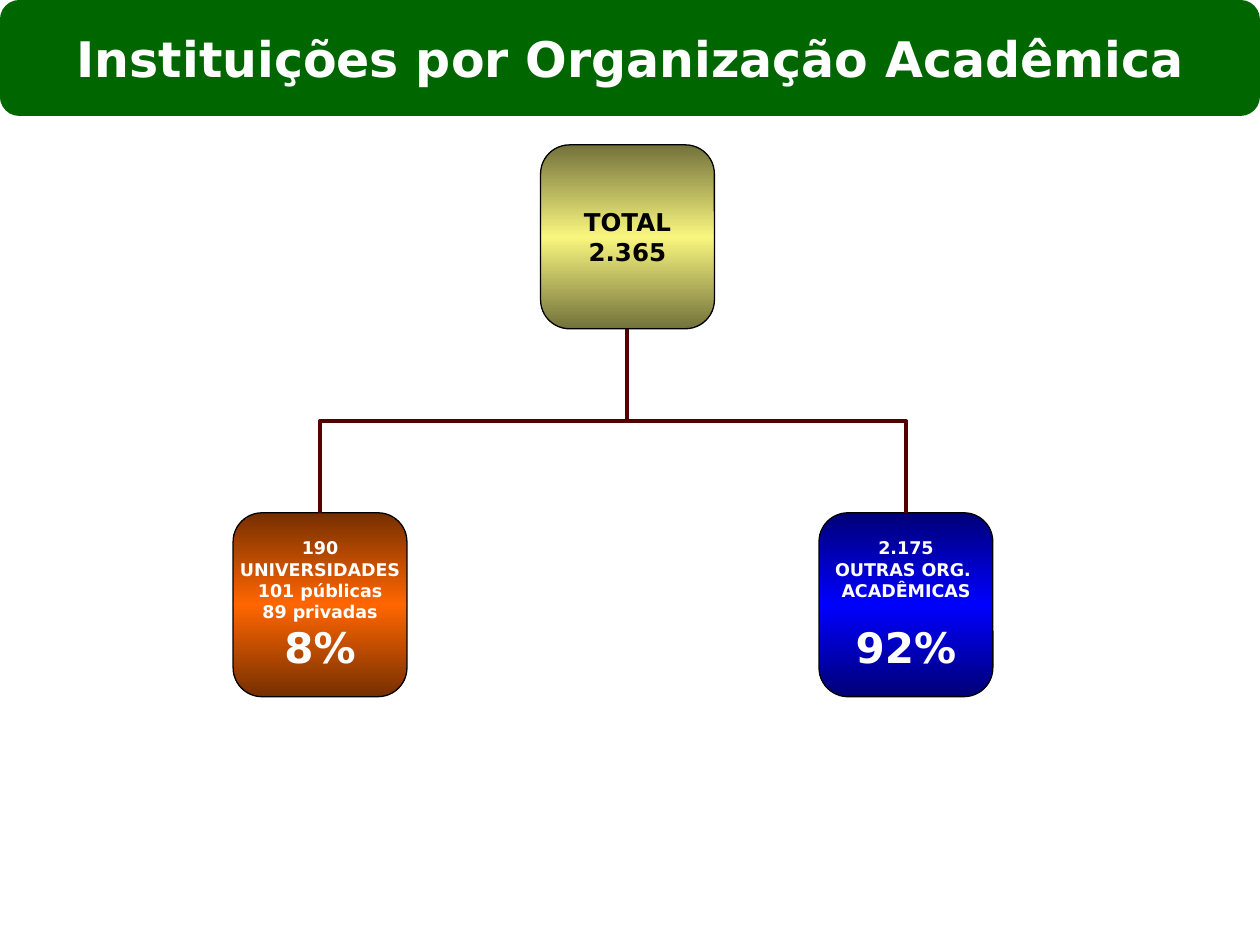
from lxml import etree
from pptx import Presentation
from pptx.dml.color import RGBColor
from pptx.enum.shapes import MSO_CONNECTOR, MSO_SHAPE
from pptx.enum.text import MSO_ANCHOR, MSO_AUTO_SIZE, PP_ALIGN
from pptx.oxml.ns import qn
from pptx.util import Inches, Pt

ROUNDED = MSO_SHAPE.ROUNDED_RECTANGLE
BANNER = MSO_SHAPE.FLOWCHART_ALTERNATE_PROCESS
ELBOW = MSO_CONNECTOR.ELBOW
MIDDLE = MSO_ANCHOR.MIDDLE
CENTER = PP_ALIGN.CENTER
NO_AUTOFIT = MSO_AUTO_SIZE.NONE

BLACK = RGBColor(0x00, 0x00, 0x00)
WHITE = RGBColor(0xFF, 0xFF, 0xFF)
GREEN = RGBColor(0x00, 0x66, 0x00)
MAROON = RGBColor(0x54, 0x00, 0x00)
OLIVE = RGBColor(0x73, 0x72, 0x3B)
YELLOW = RGBColor(0xF9, 0xF6, 0x7F)
BROWN = RGBColor(0x76, 0x2F, 0x00)
ORANGE = RGBColor(0xFF, 0x66, 0x00)
NAVY = RGBColor(0x00, 0x00, 0x76)
BLUE = RGBColor(0x00, 0x00, 0xFF)

FONT = "DejaVu Sans"
SLIDE_W, SLIDE_H = Inches(10), Inches(7.5)
BANNER_H = Inches(0.92)
BOX_W, BOX_H = Inches(1.38), Inches(1.46)
TOP_ROW = Inches(1.15)
BOTTOM_ROW = TOP_ROW + 2 * BOX_H
LEFT_COLUMN, MIDDLE_COLUMN, RIGHT_COLUMN = Inches(1.85), Inches(4.29), Inches(6.5)


def write_lines(frame, lines, color, size, last_size=None, last_gap=0, margin=0):
    frame.auto_size = NO_AUTOFIT
    frame.word_wrap = False
    frame.vertical_anchor = MIDDLE
    frame.margin_left = frame.margin_right = margin
    frame.margin_top = frame.margin_bottom = margin
    frame.text = "\n".join(lines)
    for line in frame.paragraphs:
        line.alignment = CENTER
        line.font.name = FONT
        line.font.size = Pt(size)
        line.font.bold = True
        line.font.color.rgb = color
    if last_size:
        line.font.size = Pt(last_size)
        line.space_before = Pt(last_gap)


def fill_banded(shape, edge, center):
    shape.fill.gradient()
    shape.fill.gradient_angle = 90
    stops = shape._element.spPr.find(qn("a:gradFill")).find(qn("a:gsLst"))
    for stop in list(stops):
        stops.remove(stop)
    for position, color in ((0, edge), (50000, center), (100000, edge)):
        stop = etree.SubElement(stops, qn("a:gs"), pos=str(position))
        etree.SubElement(stop, qn("a:srgbClr"), val=str(color))


def add_box(slide, left, top, edge, center, lines, **text_format):
    box = slide.shapes.add_shape(ROUNDED, left, top, BOX_W, BOX_H)
    box.shadow.inherit = False
    fill_banded(box, edge, center)
    box.line.color.rgb = BLACK
    box.line.width = Pt(0.75)
    write_lines(box.text_frame, lines, **text_format)
    return box


def add_branch(slide, child, parent):
    branch = slide.shapes.add_connector(ELBOW, 0, 0, 0, 0)
    branch.begin_connect(child, 0)
    branch.end_connect(parent, 2)
    child_x = child.left + BOX_W // 2
    parent_x = parent.left + BOX_W // 2
    parent_bottom = parent.top + BOX_H
    drop, reach = child.top - parent_bottom, abs(child_x - parent_x)
    branch.left = (child_x + parent_x - drop) // 2
    branch.top = (child.top + parent_bottom - reach) // 2
    branch.width, branch.height = drop, reach
    on_right = child_x > parent_x
    frame = branch._element.spPr.find(qn("a:xfrm"))
    frame.set("rot", str((90 if on_right else 270) * 60000))
    frame.set("flipH", "1" if on_right else "0")
    frame.set("flipV", "0")
    branch.line.color.rgb = MAROON
    branch.line.width = Pt(2.25)
    etree.SubElement(branch._element.spPr, qn("a:effectLst"))


def add_title(slide, text):
    banner = slide.shapes.add_shape(BANNER, 0, 0, SLIDE_W, BANNER_H)
    banner.shadow.inherit = False
    banner.fill.solid()
    banner.fill.fore_color.rgb = GREEN
    banner.line.fill.background()
    title = slide.shapes.title
    title.left, title.top, title.width, title.height = 0, 0, SLIDE_W, BANNER_H
    write_lines(title.text_frame, [text], color=WHITE, size=28, margin=Inches(0.05))
    slide.shapes._spTree.append(title._element)


def main():
    deck = Presentation()
    deck.slide_width, deck.slide_height = SLIDE_W, SLIDE_H
    slide = deck.slides.add_slide(deck.slide_layouts[5])
    total = add_box(slide, MIDDLE_COLUMN, TOP_ROW, OLIVE, YELLOW,
                    ["TOTAL", "2.365"], color=BLACK, size=14)
    universities = add_box(
        slide, LEFT_COLUMN, BOTTOM_ROW, BROWN, ORANGE,
        ["190", "UNIVERSIDADES", "101 públicas", "89 privadas", "8%"],
        color=WHITE, size=10, last_size=24)
    others = add_box(
        slide, RIGHT_COLUMN, BOTTOM_ROW, NAVY, BLUE,
        ["2.175", "OUTRAS ORG. ", "ACADÊMICAS", "92%"],
        color=WHITE, size=10, last_size=24, last_gap=12)
    for child in (others, universities):
        add_branch(slide, child, total)
    add_title(slide, "Instituições por Organização Acadêmica")
    deck.save("out.pptx")


if __name__ == "__main__":
    main()
